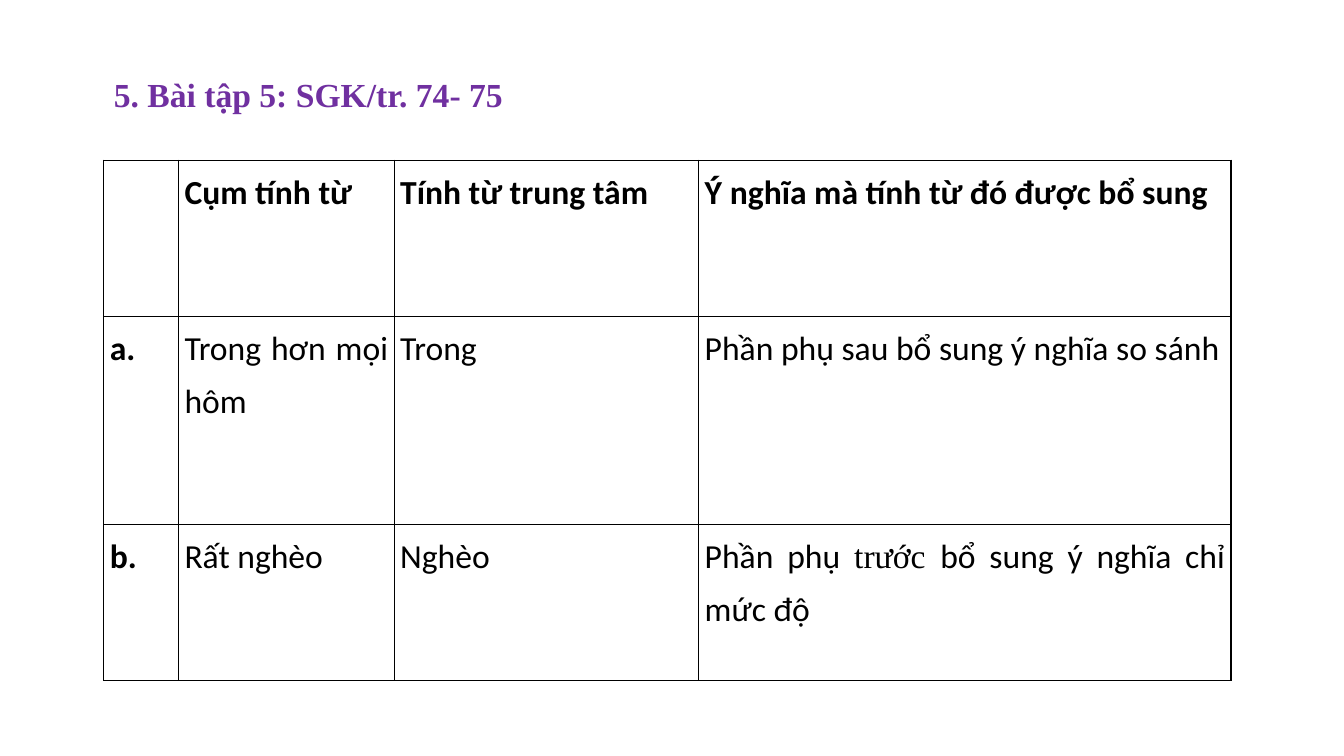
from lxml.etree import SubElement, Element
from pptx import Presentation
from pptx.dml.color import RGBColor
from pptx.enum.text import MSO_AUTO_SIZE as AutoSize, PP_ALIGN as Align
from pptx.oxml.ns import qn
from pptx.util import Inches, Pt

COLORS = {"title": "7030A0", "text": "000000", "border": "000000", "cell": "FFFFFF"}
BODY_FONT, SERIF_FONT = "Calibri", "Times New Roman"

# Shares of the slide's width or height, in percent
LEFT = 7.73
COLUMN_SHARES = [5.55, 16.05, 22.66, 39.61]
ROW_SHARES = [20.67, 27.47, 20.67]

EXERCISE_ROWS = [
    ["", "Cụm tính từ", "Tính từ trung tâm", "Ý nghĩa mà tính từ đó được bổ sung"],
    ["a.", "Trong hơn mọi hôm", "Trong", "Phần phụ sau bổ sung ý nghĩa so sánh"],
    ["b.", "Rất nghèo", "Nghèo", [
        ("Phần phụ ", BODY_FONT),
        ("trước ", SERIF_FONT),
        ("bổ sung ý nghĩa chỉ mức độ", BODY_FONT),
    ]],
]


def apply_format(target, values):
    for name, value in values.items():
        setattr(target, name, value)


class LessonSlide:
    def __init__(self, deck):
        self.width, self.height = deck.slide_width, deck.slide_height
        self.slide = deck.slides.add_slide(deck.slide_layouts[6])
        self.text_size = Pt(24)
        self.cell_margins = {"margin_left": Inches(0.06), "margin_right": Inches(0.06),
                             "margin_top": 0, "margin_bottom": 0}

    def across(self, share):
        return round(self.width * share / 100)

    def down(self, share):
        return round(self.height * share / 100)

    def fill_paragraph(self, paragraph, pieces, color, bold, spacing=None):
        """Fill a justified paragraph with (text, font) pieces."""
        apply_format(paragraph, {"alignment": Align.JUSTIFY, "line_spacing": spacing})
        for text, font in pieces:
            run = paragraph.add_run()
            run.text = text
            apply_format(run.font, {"name": font, "size": self.text_size, "bold": bold})
            run.font.color.rgb = RGBColor.from_string(COLORS[color])

    def title(self, text, left, top, width, height):
        heading = self.slide.shapes.add_textbox(
            self.across(left), self.down(top), self.across(width), self.down(height))
        apply_format(heading.text_frame,
                     {"word_wrap": False, "auto_size": AutoSize.SHAPE_TO_FIT_TEXT})
        self.fill_paragraph(heading.text_frame.paragraphs[0], [(text, SERIF_FONT)],
                            "title", bold=True)

    def border(self, cell):
        properties = cell._tc.get_or_add_tcPr()
        for position, side in enumerate(("lnL", "lnR", "lnT", "lnB")):
            line = Element(qn(f"a:{side}"), w=str(Pt(1)))
            fill = SubElement(line, qn("a:solidFill"))
            SubElement(fill, qn("a:srgbClr"), val=COLORS["border"])
            properties.insert(position, line)

    def table(self, rows, left, top, column_shares, row_shares):
        grid = self.slide.shapes.add_table(
            len(row_shares), len(column_shares), self.across(left), self.down(top),
            self.across(sum(column_shares)), self.down(sum(row_shares))).table
        for column, share in zip(grid.columns, column_shares):
            column.width = self.across(share)
        for row, share in zip(grid.rows, row_shares):
            row.height = self.down(share)
        for r, row in enumerate(rows):
            for c, content in enumerate(row):
                cell = grid.cell(r, c)
                apply_format(cell, self.cell_margins)
                cell.fill.solid()
                cell.fill.fore_color.rgb = RGBColor.from_string(COLORS["cell"])
                self.border(cell)
                if content:
                    pieces = [(content, BODY_FONT)] if isinstance(content, str) else content
                    self.fill_paragraph(cell.text_frame.paragraphs[0], pieces, "text",
                                        bold=r == 0 or c == 0, spacing=1.3)


def main():
    deck = Presentation()
    apply_format(deck, {"slide_width": Inches(13.33), "slide_height": Inches(7.5)})
    lesson = LessonSlide(deck)
    lesson.title("5. Bài tập 5: SGK/tr. 74- 75", LEFT, 9.07, 30.76, 6.67)
    lesson.table(EXERCISE_ROWS, LEFT, 21.2, COLUMN_SHARES, ROW_SHARES)
    deck.save("out.pptx")


if __name__ == "__main__":
    main()
